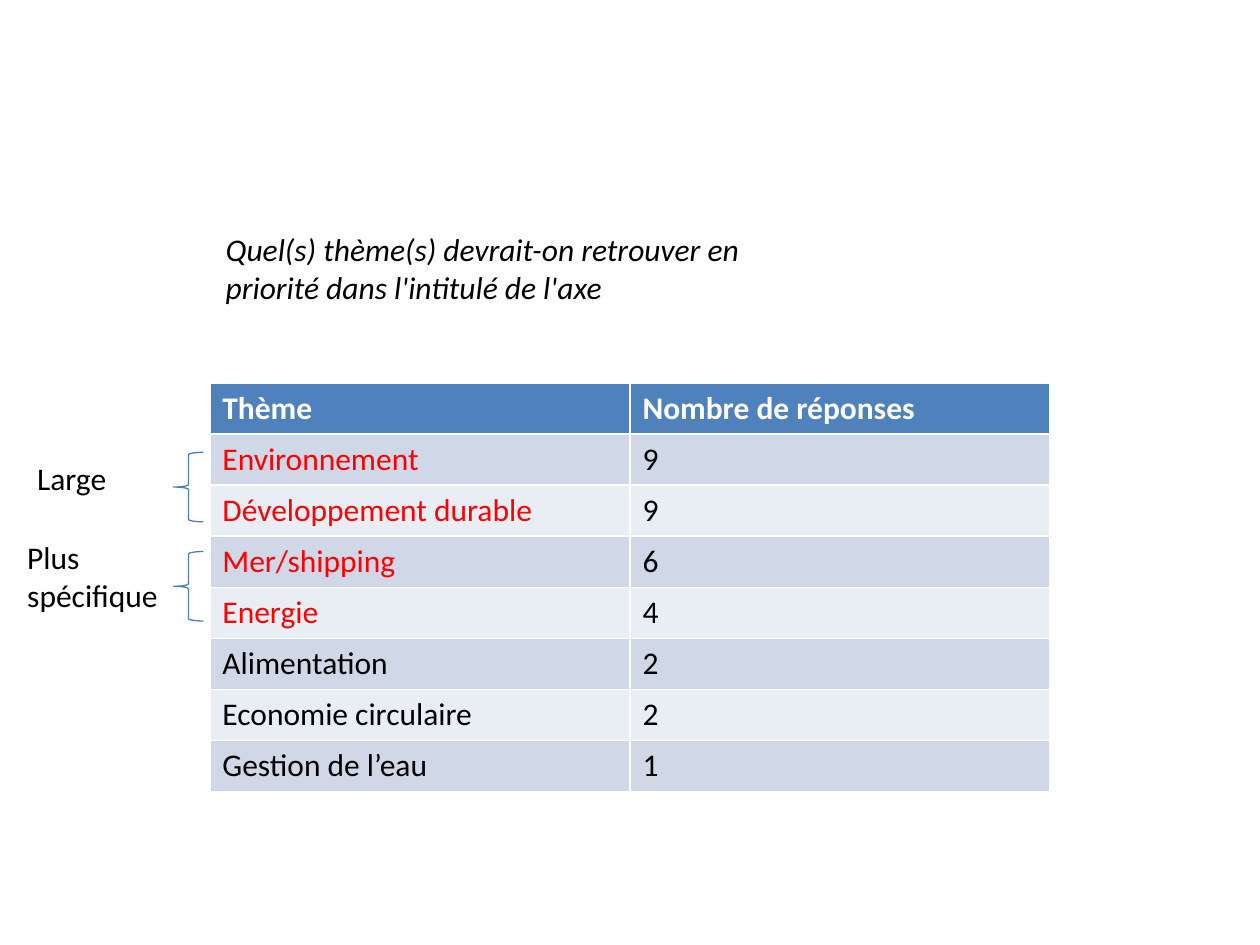
"""Build a slide ranking the themes to put first in the title of a research axis."""
from pptx import Presentation
from pptx.dml.color import RGBColor
from pptx.enum.shapes import MSO_SHAPE
from pptx.enum.text import MSO_AUTO_SIZE
from pptx.util import Cm, Pt

LEFT_BRACE = MSO_SHAPE.LEFT_BRACE
FIT_SHAPE = MSO_AUTO_SIZE.SHAPE_TO_FIT_TEXT

WHITE = RGBColor(0xFF, 0xFF, 0xFF)
BLACK = RGBColor(0x00, 0x00, 0x00)
RED = RGBColor(0xFF, 0x00, 0x00)
HEADER_BLUE = RGBColor(0x4F, 0x81, 0xBD)
BAND_DARK = RGBColor(0xD0, 0xD8, 0xE8)
BAND_LIGHT = RGBColor(0xE9, 0xED, 0xF4)
BRACE_BLUE = RGBColor(0x4B, 0x7E, 0xBC)

ROWS = [
    ("Thème", "Nombre de réponses"),
    ("Environnement", "9"),
    ("Développement durable", "9"),
    ("Mer/shipping", "6"),
    ("Energie", "4"),
    ("Alimentation", "2"),
    ("Economie circulaire", "2"),
    ("Gestion de l’eau", "1"),
]
PRIORITY_ROWS = range(1, 5)
COLUMN_WIDTH, ROW_HEIGHT = 8.47, 1.03

QUESTION = "Quel(s) thème(s) devrait-on retrouver en priorité dans l'intitulé de l'axe"
TEXTS = [
    ([QUESTION], (4.3, 4.52, 12.7, 1.8), True, True),
    (["Large"], (0.5, 9.12, 1.94, 1.03), False, False),
    (["Plus", "spécifique"], (0.3, 10.72, 3.17, 1.8), False, False),
]
BRACE_TOPS = [9.12, 11.12]


def format_text(paragraph, color, bold=False, italic=False):
    values = {"name": "Calibri", "size": Pt(18), "bold": bold, "italic": italic}
    for attribute, value in values.items():
        setattr(paragraph.font, attribute, value)
    paragraph.font.color.rgb = color


prs = Presentation()
prs.slide_width, prs.slide_height = Cm(25.4), Cm(19.05)
slide = prs.slides.add_slide(prs.slide_layouts[6])

themes = slide.shapes.add_table(
    len(ROWS), 2, Cm(4.23), Cm(7.72), Cm(2 * COLUMN_WIDTH), Cm(len(ROWS) * ROW_HEIGHT)
).table
for column in themes.columns:
    column.width = Cm(COLUMN_WIDTH)
for row_index, row_texts in enumerate(ROWS):
    themes.rows[row_index].height = Cm(ROW_HEIGHT)
    is_header = row_index == 0
    band = BAND_DARK if row_index % 2 else BAND_LIGHT
    for column_index, cell_text in enumerate(row_texts):
        cell = themes.cell(row_index, column_index)
        cell.text = cell_text
        cell.fill.solid()
        cell.fill.fore_color.rgb = HEADER_BLUE if is_header else band
        is_priority = column_index == 0 and row_index in PRIORITY_ROWS
        color = WHITE if is_header else RED if is_priority else BLACK
        format_text(cell.text_frame.paragraphs[0], color, bold=is_header)

for top in BRACE_TOPS:
    brace = slide.shapes.add_shape(LEFT_BRACE, Cm(3.5), Cm(top), Cm(0.6), Cm(1.4))
    brace.shadow.inherit = False
    brace.fill.background()
    brace.line.color.rgb = BRACE_BLUE
    brace.line.width = Pt(0.75)

for lines, box, wrap, italic in TEXTS:
    frame = slide.shapes.add_textbox(*map(Cm, box)).text_frame
    frame.text = "\n".join(lines)
    frame.word_wrap = wrap
    frame.auto_size = FIT_SHAPE
    for paragraph in frame.paragraphs:
        format_text(paragraph, BLACK, italic=italic)

prs.save("out.pptx")
